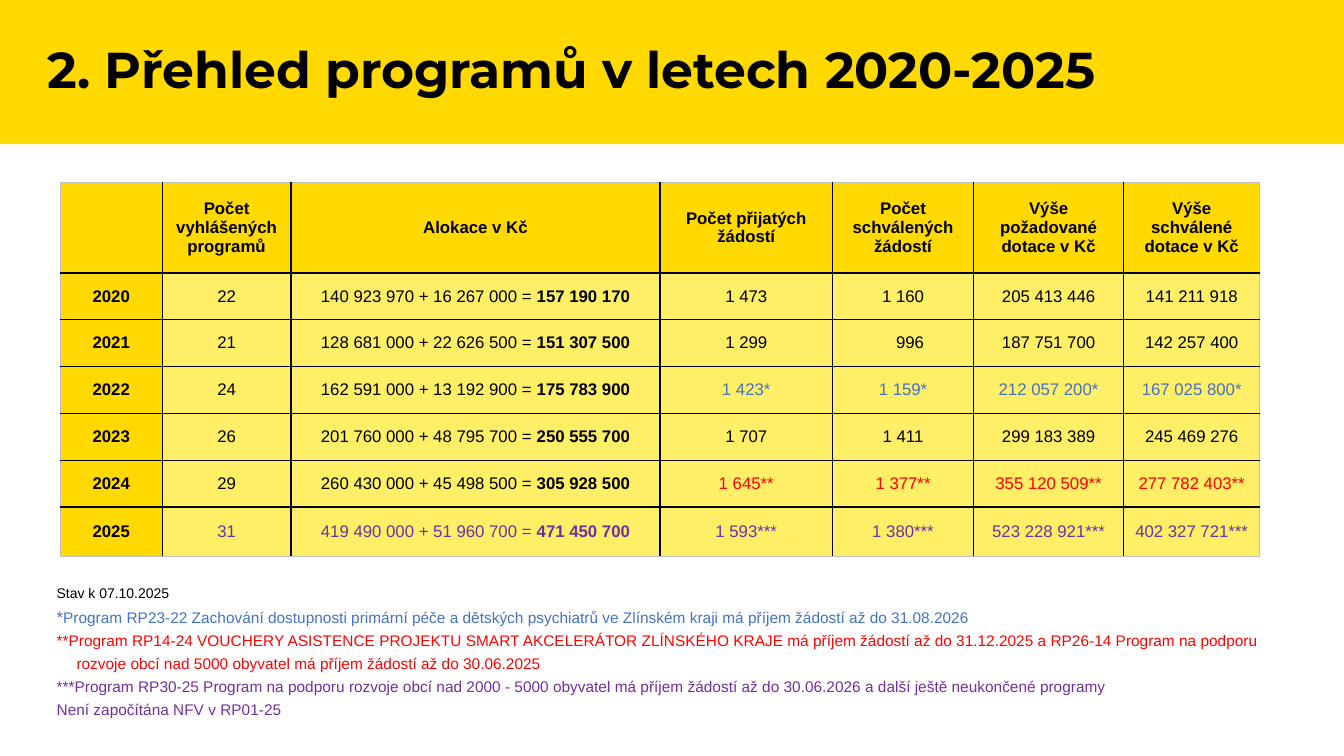
"""Build the slide that sums up the grant programmes of 2020-2025."""
from pptx import Presentation
from pptx.dml.color import RGBColor
from pptx.enum.shapes import MSO_SHAPE
from pptx.enum.text import MSO_ANCHOR, PP_ALIGN
from pptx.oxml.ns import qn
from pptx.util import Pt
from lxml import etree

RECTANGLE = MSO_SHAPE.RECTANGLE
MIDDLE = MSO_ANCHOR.MIDDLE
CENTER = PP_ALIGN.CENTER

YELLOW = RGBColor(0xFF, 0xD9, 0x00)
PALE_YELLOW = RGBColor(0xFE, 0xEF, 0x66)
BLACK = RGBColor(0x00, 0x00, 0x00)
GREY = RGBColor(0xBF, 0xBF, 0xBF)
BLUE = RGBColor(0x44, 0x72, 0xC4)
RED = RGBColor(0xFF, 0x00, 0x00)
PURPLE = RGBColor(0x70, 0x30, 0xA0)

SLIDE_WIDTH, SLIDE_HEIGHT = 960, 540
BAND_HEIGHT = 103
COLUMN_WIDTHS = [72.9, 92, 263.6, 123.2, 100.8, 107.2, 97.3]
ROW_HEIGHTS = [64.8, 33.2, 33.6, 33.6, 33.6, 33.2, 35]
ALLOCATION = 2

HEADERS = ["", "Počet vyhlášených programů", "Alokace v Kč",
           "Počet přijatých žádostí", "Počet schválených žádostí",
           "Výše požadované dotace v Kč", "Výše schválené dotace v Kč"]
YEARS = [
    ["2020", "22", "140 923 970 + 16 267 000 = 157 190 170",
     "1 473", "1 160", "205 413 446", "141 211 918"],
    ["2021", "21", "128 681 000 + 22 626 500 = 151 307 500",
     "1 299", "996", "187 751 700", "142 257 400"],
    ["2022", "24", "162 591 000 + 13 192 900 = 175 783 900",
     "1 423*", "1 159*", "212 057 200*", "167 025 800*"],
    ["2023", "26", "201 760 000 + 48 795 700 = 250 555 700",
     "1 707", "1 411", "299 183 389", "245 469 276"],
    ["2024", "29", "260 430 000 + 45 498 500 = 305 928 500",
     "1 645**", "1 377**", "355 120 509**", "277 782 403**"],
    ["2025", "31", "419 490 000 + 51 960 700 = 471 450 700",
     "1 593***", "1 380***", "523 228 921***", "402 327 721***"],
]
YEAR_COLORS = {"2022": (BLUE, 3), "2024": (RED, 3), "2025": (PURPLE, 1)}

NOTES = [
    [("Stav k 07.10.2025", 10, BLACK)],
    [("*", 12, BLUE),
     ("Program RP23-22 Zachování dostupnosti primární péče a dětských "
      "psychiatrů ve Zlínském kraji má příjem žádostí až do 31.08.2026",
      11, BLUE)],
    [("**Program RP14-24 VOUCHERY ASISTENCE PROJEKTU SMART AKCELERÁTOR "
      "ZLÍNSKÉHO KRAJE má příjem žádostí až do 31.12.2025 a RP26-14 "
      "Program na podporu rozvoje obcí nad 5000 obyvatel má příjem žádostí "
      "až do 30.06.2025", 11, RED)],
    [("***Program RP30-25 Program na podporu rozvoje obcí nad 2000 - 5000 "
      "obyvatel má příjem žádostí až do 30.06.2026 a další ještě "
      "neukončené programy", 11, PURPLE)],
    [("Není započítána NFV v RP01-25", 11, PURPLE)],
]


def add_run(paragraph, text, size, color=BLACK, bold=False, font="Arial"):
    """Append one formatted run to a paragraph."""
    run = paragraph.add_run()
    run.text = text
    run.font.name = font
    run.font.size = Pt(size)
    run.font.bold = bold
    run.font.color.rgb = color


def add_title_band(slide, title):
    """Draw the yellow band with the slide title in it."""
    band = slide.shapes.add_shape(
        RECTANGLE, Pt(0), Pt(0), Pt(SLIDE_WIDTH), Pt(BAND_HEIGHT))
    band.shadow.inherit = False
    band.fill.solid()
    band.fill.fore_color.rgb = YELLOW
    band.line.fill.background()
    frame = band.text_frame
    frame.word_wrap = True
    frame.vertical_anchor = MIDDLE
    frame.margin_left = Pt(33.8)
    heading = frame.paragraphs[0]
    heading.alignment = PP_ALIGN.LEFT
    heading.line_spacing = 0.9
    add_run(heading, title, 36, bold=True, font="Montserrat")


def set_border(cell, side, color, width):
    """Give one side of a cell a solid line."""
    line = etree.SubElement(cell._tc.get_or_add_tcPr(), qn(f"a:ln{side}"),
                            w=str(Pt(width)))
    fill = etree.SubElement(line, qn("a:solidFill"))
    etree.SubElement(fill, qn("a:srgbClr"), val=str(color))


def style_cell(cell, fill, outer_sides):
    """Set the borders, the fill and the anchor of a cell."""
    for side in "LRTB":
        if side in outer_sides:
            set_border(cell, side, GREY, 0.75)
        else:
            set_border(cell, side, BLACK, 1)
    cell.fill.solid()
    cell.fill.fore_color.rgb = fill
    cell.vertical_anchor = MIDDLE


def write_cell(cell, text, column, color, bold):
    """Write centred cell text, with the allocation total in bold."""
    paragraph = cell.text_frame.paragraphs[0]
    paragraph.alignment = CENTER
    addends, equals, total = text.partition("= ")
    if column == ALLOCATION and equals:
        add_run(paragraph, addends + equals, 12, color)
        add_run(paragraph, total, 12, color, True)
    elif text:
        add_run(paragraph, text, 12, color, bold)


def add_programme_table(slide):
    """Add the table of programmes, one row a year."""
    rows = [HEADERS] + YEARS
    table = slide.shapes.add_table(
        len(rows), len(HEADERS), Pt(43), Pt(130.2),
        Pt(sum(COLUMN_WIDTHS)), Pt(sum(ROW_HEIGHTS))).table
    table.horz_banding = False
    for column, width in zip(table.columns, COLUMN_WIDTHS):
        column.width = Pt(width)
    for row, height in zip(table.rows, ROW_HEIGHTS):
        row.height = Pt(height)

    last_row, last_column = len(rows) - 1, len(HEADERS) - 1
    for r, values in enumerate(rows):
        year_color, first_colored = YEAR_COLORS.get(values[0], (BLACK, 0))
        for c, text in enumerate(values):
            cell = table.cell(r, c)
            heading = r == 0 or c == 0
            edges = {"L": c == 0, "R": c == last_column,
                     "T": r == 0, "B": r == last_row}
            style_cell(cell, YELLOW if heading else PALE_YELLOW,
                       [side for side, outer in edges.items() if outer])
            color = year_color if c >= first_colored else BLACK
            write_cell(cell, text, c, color, heading)
            cell.margin_top = cell.margin_bottom = Pt(3.6)
            if text == "996":
                cell.margin_left = Pt(17.2)


def add_notes(slide):
    """Add the footnotes with a hanging indent."""
    frame = slide.shapes.add_textbox(
        Pt(33.4), Pt(411), Pt(895), Pt(113)).text_frame
    frame.word_wrap = True
    for index, note in enumerate(NOTES):
        paragraph = frame.add_paragraph() if index else frame.paragraphs[0]
        paragraph.line_spacing = 1.25
        properties = paragraph._p.get_or_add_pPr()
        properties.set("marL", str(Pt(14.2)))
        properties.set("indent", str(Pt(-14.2)))
        for text, size, color in note:
            add_run(paragraph, text, size, color)


def main():
    """Build and save the slide."""
    deck = Presentation()
    deck.slide_width, deck.slide_height = Pt(SLIDE_WIDTH), Pt(SLIDE_HEIGHT)
    slide = deck.slides.add_slide(deck.slide_layouts[6])
    add_title_band(slide, "2. Přehled programů v letech 2020-2025")
    add_programme_table(slide)
    add_notes(slide)
    deck.save("out.pptx")


if __name__ == "__main__":
    main()
